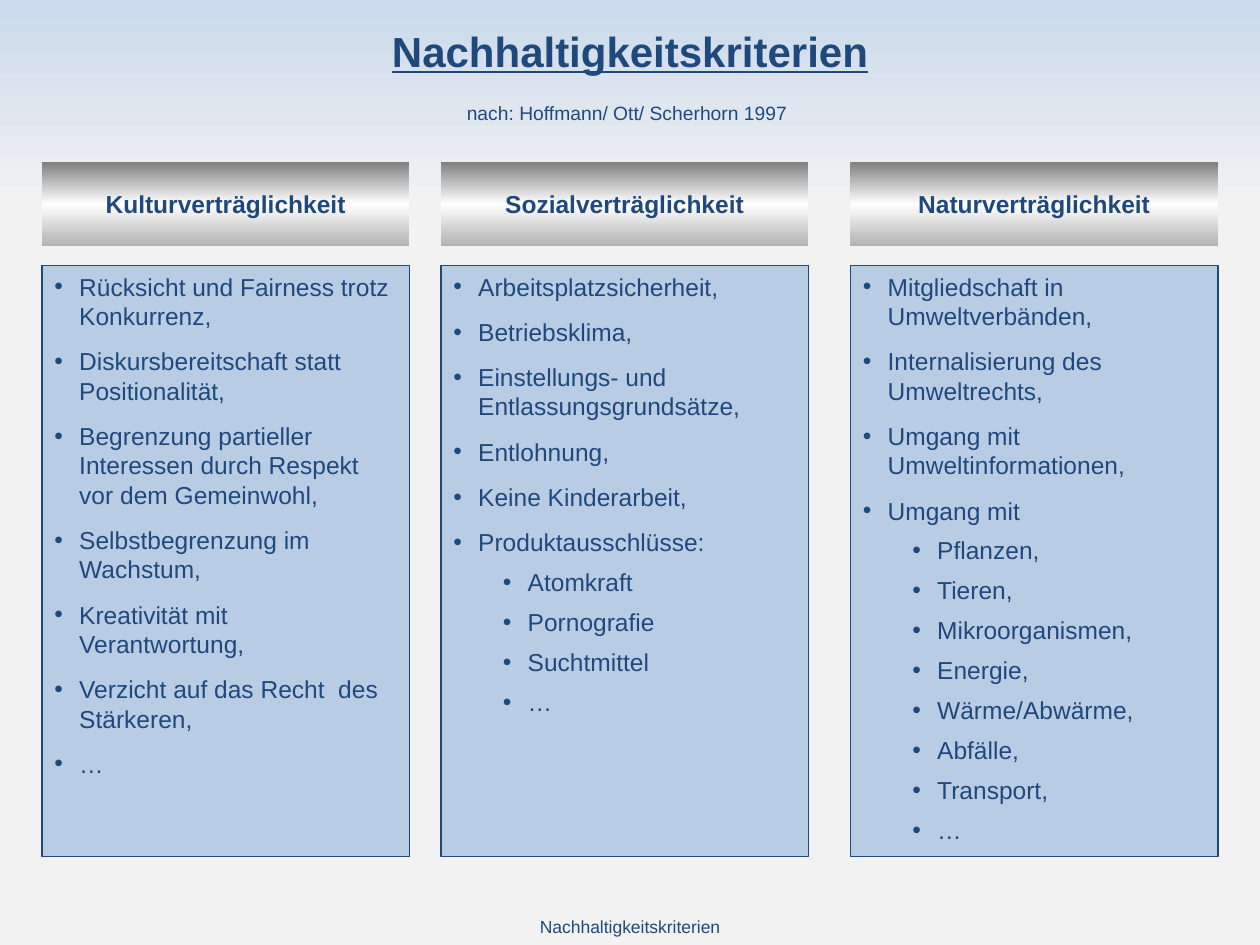
from lxml import etree
from pptx import Presentation
from pptx.dml.color import RGBColor
from pptx.enum.shapes import MSO_SHAPE
from pptx.enum.text import MSO_ANCHOR, PP_ALIGN
from pptx.oxml.ns import qn
from pptx.util import Pt

RECTANGLE = MSO_SHAPE.RECTANGLE
TOP, MIDDLE = MSO_ANCHOR.TOP, MSO_ANCHOR.MIDDLE
LEFT, CENTER = PP_ALIGN.LEFT, PP_ALIGN.CENTER

COLORS = {
    "text": "1F497D",
    "panel": "B8CCE4",
    "sky": "CAD9EB",
    "ground": "F2F2F2",
    "steel": "808080",
    "shine": "FFFFFF",
    "silver": "B2B2B2",
}
PAGE_GRADIENT = [(0, "sky"), (22, "ground"), (100, "ground")]
HEADER_GRADIENT = [(0, "steel"), (50, "shine"), (100, "silver")]

COLUMN_LEFT, COLUMN_STEP, COLUMN_WIDTH = 24, 231, 210
HEADER_TOP, HEADER_HEIGHT = 92.6, 48
PANEL_TOP, PANEL_HEIGHT = 151.7, 337.7

# Indent and space before for each list level
LEVEL_INDENT = [14.2, 42.5]
LEVEL_SPACE = [9, 6]
HANGING = 14.2

# Heading, main points, sub-points of the last main point
COLUMNS = [
    ("Kulturverträglichkeit",
     ["Rücksicht und Fairness trotz Konkurrenz,",
      "Diskursbereitschaft statt Positionalität,",
      "Begrenzung partieller Interessen durch Respekt vor dem Gemeinwohl,",
      "Selbstbegrenzung im Wachstum,",
      "Kreativität mit Verantwortung,",
      "Verzicht auf das Recht  des Stärkeren,",
      "…"],
     []),
    ("Sozialverträglichkeit",
     ["Arbeitsplatzsicherheit,",
      "Betriebsklima,",
      "Einstellungs- und Entlassungsgrundsätze,",
      "Entlohnung,",
      "Keine Kinderarbeit,",
      "Produktausschlüsse:"],
     ["Atomkraft", "Pornografie", "Suchtmittel", "…"]),
    ("Naturverträglichkeit",
     ["Mitgliedschaft in Umweltverbänden,",
      "Internalisierung des Umweltrechts,",
      "Umgang mit Umweltinformationen,",
      "Umgang mit"],
     ["Pflanzen,", "Tieren,", "Mikroorganismen,", "Energie,",
      "Wärme/Abwärme,", "Abfälle,", "Transport,", "…"]),
]


def color(name):
    return RGBColor.from_string(COLORS[name])


def set_gradient(fill, element, stops):
    """Fill from top to bottom with any number of colour stops."""
    fill.gradient()
    fill.gradient_angle = 270
    stop_list = element.xpath(".//a:gsLst")[0]
    for old_stop in list(stop_list):
        stop_list.remove(old_stop)
    for percent, name in stops:
        stop = etree.SubElement(stop_list, qn("a:gs"), pos=str(percent * 1000))
        etree.SubElement(stop, qn("a:srgbClr"), val=COLORS[name])


def write(para, text, size=14, bold=False, underline=False, align=LEFT):
    para.alignment = align
    span = para.add_run()
    span.text = text
    span.font.name = "Arial"
    span.font.size = Pt(size)
    span.font.bold = bold
    span.font.underline = underline
    span.font.color.rgb = color("text")


def set_bullet(para, level):
    para.level = level
    properties = para._p.get_or_add_pPr()
    properties.set("marL", str(Pt(LEVEL_INDENT[level])))
    properties.set("indent", str(-Pt(HANGING)))
    etree.SubElement(properties, qn("a:buFont"), typeface="Arial")
    etree.SubElement(properties, qn("a:buChar"), char="•")


def add_label(page, text, left, top, width, height, anchor=MIDDLE, wrap=True, **style):
    box = page.shapes.add_textbox(Pt(left), Pt(top), Pt(width), Pt(height))
    frame = box.text_frame
    frame.word_wrap = wrap
    frame.vertical_anchor = anchor
    write(frame.paragraphs[0], text, align=CENTER, **style)


def add_rectangle(page, left, top, height):
    box = page.shapes.add_shape(
        RECTANGLE, Pt(left), Pt(top), Pt(COLUMN_WIDTH), Pt(height))
    box.shadow.inherit = False
    return box


def add_header(page, text, left):
    box = add_rectangle(page, left, HEADER_TOP, HEADER_HEIGHT)
    set_gradient(box.fill, box._element, HEADER_GRADIENT)
    box.line.fill.background()
    frame = box.text_frame
    frame.word_wrap = False
    frame.vertical_anchor = MIDDLE
    write(frame.paragraphs[0], text, bold=True, align=CENTER)


def add_panel(page, points, subpoints, left):
    box = add_rectangle(page, left, PANEL_TOP, PANEL_HEIGHT)
    box.fill.solid()
    box.fill.fore_color.rgb = color("panel")
    box.line.color.rgb = color("text")
    box.line.width = Pt(0.75)
    frame = box.text_frame
    frame.word_wrap = True
    frame.vertical_anchor = TOP
    entries = [(text, 0) for text in points] + [(text, 1) for text in subpoints]
    for index, (text, level) in enumerate(entries):
        para = frame.add_paragraph() if index else frame.paragraphs[0]
        set_bullet(para, level)
        if index:
            para.space_before = Pt(LEVEL_SPACE[level])
        write(para, text)


def main():
    deck = Presentation()
    deck.slide_width, deck.slide_height = Pt(720), Pt(540)
    page = deck.slides.add_slide(deck.slide_layouts[6])
    set_gradient(page.background.fill, page._element, PAGE_GRADIENT)

    # Three criteria columns
    for index, (heading, points, subpoints) in enumerate(COLUMNS):
        left = COLUMN_LEFT + index * COLUMN_STEP
        if index == 1:
            left -= 3  # the middle column sits slightly left of centre
        add_header(page, heading, left)
        add_panel(page, points, subpoints, left)

    # Title, source and footer
    add_label(page, "Nachhaltigkeitskriterien", 24, 2.6, 672, 52.6,
              wrap=False, size=24, bold=True, underline=True)
    add_label(page, "nach: Hoffmann/ Ott/ Scherhorn 1997 ", 258.7, 54.5, 202.5, 21,
              anchor=TOP, size=11)
    add_label(page, "Nachhaltigkeitskriterien", 288, 518.5, 144, 21.5, size=10)

    deck.save("out.pptx")


if __name__ == "__main__":
    main()
